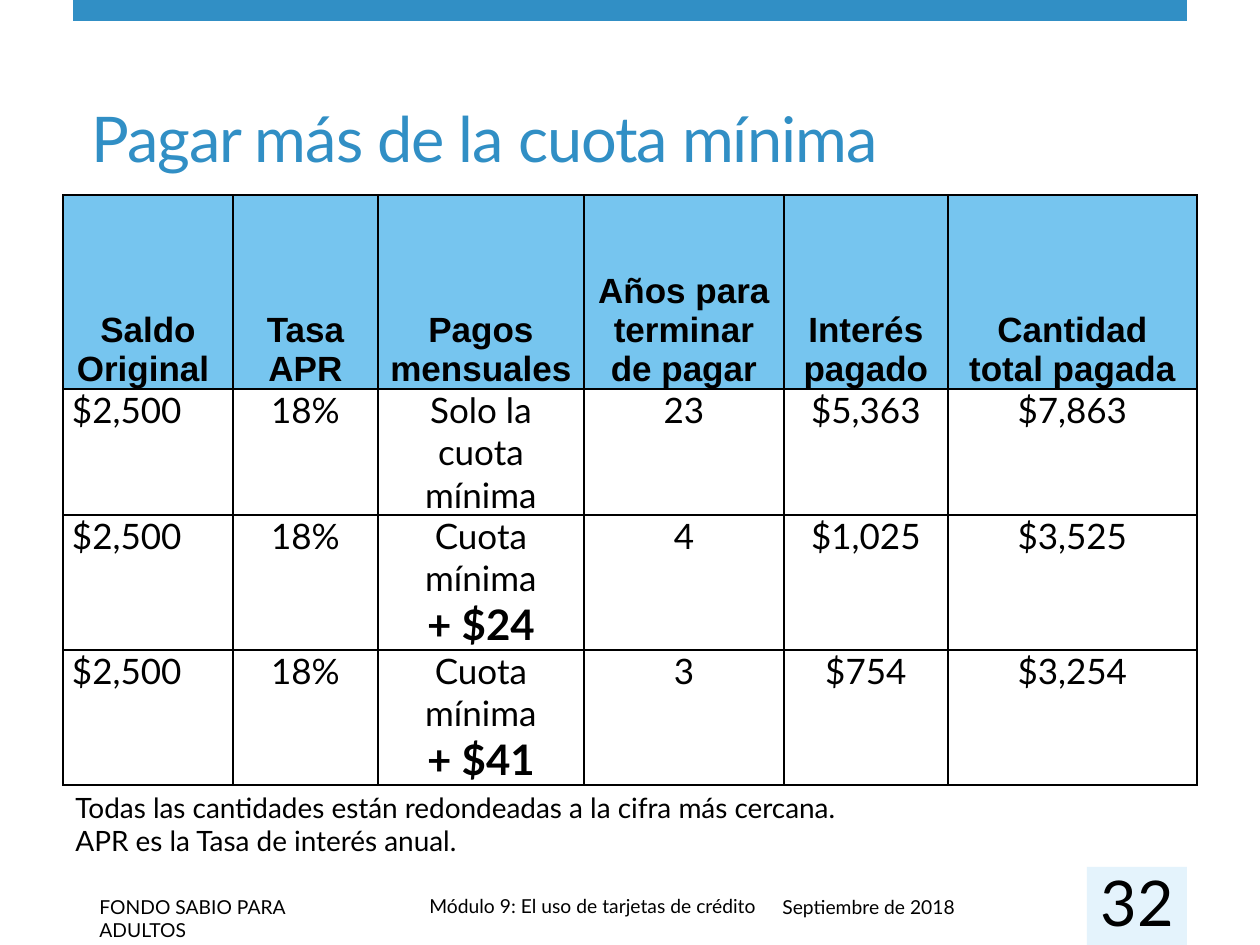
from lxml import etree
from pptx import Presentation
from pptx.dml.color import RGBColor
from pptx.enum.shapes import MSO_SHAPE
from pptx.enum.text import MSO_ANCHOR, PP_ALIGN
from pptx.oxml.ns import qn
from pptx.util import Pt

RECTANGLE = MSO_SHAPE.RECTANGLE
TOP, MIDDLE, BOTTOM = MSO_ANCHOR.TOP, MSO_ANCHOR.MIDDLE, MSO_ANCHOR.BOTTOM
LEFT, CENTER = PP_ALIGN.LEFT, PP_ALIGN.CENTER

EMU_PER_PX = 914400 / 126
COLORS = {"accent": "318FC5", "pale": "E4F3FC", "header": "76C5EF", "text": "000000"}
BODY_FONT, HEADER_FONT = "Lato", "Arial"


def px(length):
    return round(length * EMU_PER_PX)


class SlideBuilder:
    def __init__(self, slide):
        self.slide = slide

    def add_words(self, paragraph, text, size, color="text", name=BODY_FONT, bold=False, spacing=0):
        run = paragraph.add_run()
        run.text = text
        font_format = {"size": Pt(size), "name": name, "bold": bold}
        for attribute, value in font_format.items():
            setattr(run.font, attribute, value)
        run.font.color.rgb = RGBColor.from_string(COLORS[color])
        if spacing:
            run.font._element.set("spc", str(spacing))

    def block(self, x, y, width, height, color):
        block = self.slide.shapes.add_shape(RECTANGLE, px(x), px(y), px(width), px(height))
        block.shadow.inherit = False
        block.fill.solid()
        block.fill.fore_color.rgb = RGBColor.from_string(COLORS[color])
        block.line.fill.background()

    def text(self, x, y, width, height, lines, size, anchor=TOP, align=LEFT, inset=None, **style):
        frame = self.slide.shapes.add_textbox(px(x), px(y), px(width), px(height)).text_frame
        frame_format = {"word_wrap": True, "vertical_anchor": anchor}
        if inset is not None:
            for side in ("left", "top", "right", "bottom"):
                frame_format[f"margin_{side}"] = px(inset)
        for attribute, value in frame_format.items():
            setattr(frame, attribute, value)
        for index, line in enumerate(lines):
            paragraph = frame.add_paragraph() if index else frame.paragraphs[0]
            paragraph.alignment = align
            self.add_words(paragraph, line, size, **style)

    def borders(self, cell):
        properties = cell._tc.get_or_add_tcPr()
        for position, side in enumerate(("lnL", "lnR", "lnT", "lnB")):
            line = etree.Element(qn(f"a:{side}"), w=str(Pt(1)))
            fill = etree.SubElement(line, qn("a:solidFill"))
            etree.SubElement(fill, qn("a:srgbClr"), val=COLORS["text"])
            properties.insert(position, line)

    def cell(self, cell, content, is_header, align):
        cell_format = {
            "margin_left": px(9), "margin_right": px(9), "margin_top": 0, "margin_bottom": 0,
            "vertical_anchor": BOTTOM if is_header else TOP,
        }
        for attribute, value in cell_format.items():
            setattr(cell, attribute, value)
        if is_header:
            cell.fill.solid()
            cell.fill.fore_color.rgb = RGBColor.from_string(COLORS["header"])
        else:
            cell.fill.background()
        self.borders(cell)
        paragraph = cell.text_frame.paragraphs[0]
        paragraph.alignment = align
        paragraph.space_after = Pt(12)
        label, _, extra = content.partition("\n")
        font_name = HEADER_FONT if is_header else BODY_FONT
        self.add_words(paragraph, label, 20, name=font_name, bold=is_header)
        if extra:
            paragraph.add_line_break()
            self.add_words(paragraph, extra, 24, bold=True)

    def table(self, x, y, widths, heights, rows):
        table = self.slide.shapes.add_table(
            len(rows), len(widths), px(x), px(y), px(sum(widths)), px(sum(heights))
        ).table
        table.horz_banding = False
        for column, width in zip(table.columns, widths):
            column.width = px(width)
        for row, height in zip(table.rows, heights):
            row.height = px(height)
        for r, row in enumerate(rows):
            for c, content in enumerate(row):
                align = LEFT if r and c == 0 else CENTER
                self.cell(table.cell(r, c), content, r == 0, align)


def main():
    presentation = Presentation()
    presentation.slide_width, presentation.slide_height = px(1260), px(945)
    builder = SlideBuilder(presentation.slides.add_slide(presentation.slide_layouts[6]))

    builder.block(73, 0, 1114, 21, "accent")
    builder.block(1087, 867, 100, 78, "pale")
    builder.text(79, 60, 1033, 121, ["Pagar más de la cuota mínima"], 36,
                 anchor=BOTTOM, color="accent", spacing=-60)

    payment_rows = [
        ["Saldo Original ", "Tasa APR", "Pagos mensuales", "Años para terminar de pagar",
         "Interés pagado", "Cantidad total pagada"],
        ["$2,500", "18%", "Solo la cuota mínima", "23", "$5,363", "$7,863"],
        ["$2,500", "18%", "Cuota mínima\n+ $24", "4", "$1,025", "$3,525"],
        ["$2,500", "18%", "Cuota mínima\n+ $41", "3", "$754", "$3,254"],
    ]
    builder.table(63, 195, [170, 145, 206, 200, 164, 249], [194, 126, 135, 135], payment_rows)

    notes = ["Todas las cantidades están redondeadas a la cifra más cercana.",
             "APR es la Tasa de interés anual."]
    builder.text(63, 784, 1101, 81, notes, 16)

    footers = [
        (87, 889, 281, "FONDO SABIO PARA ADULTOS"),
        (417, 888, 353, "Módulo 9: El uso de tarjetas de crédito"),
        (770, 889, 317, "Septiembre de 2018"),
    ]
    for x, y, width, footer in footers:
        builder.text(x, y, width, 37, [footer], 11)
    builder.text(1087, 877, 100, 48, ["32"], 36, anchor=MIDDLE, align=CENTER, inset=0)

    presentation.save("out.pptx")


if __name__ == "__main__":
    main()
